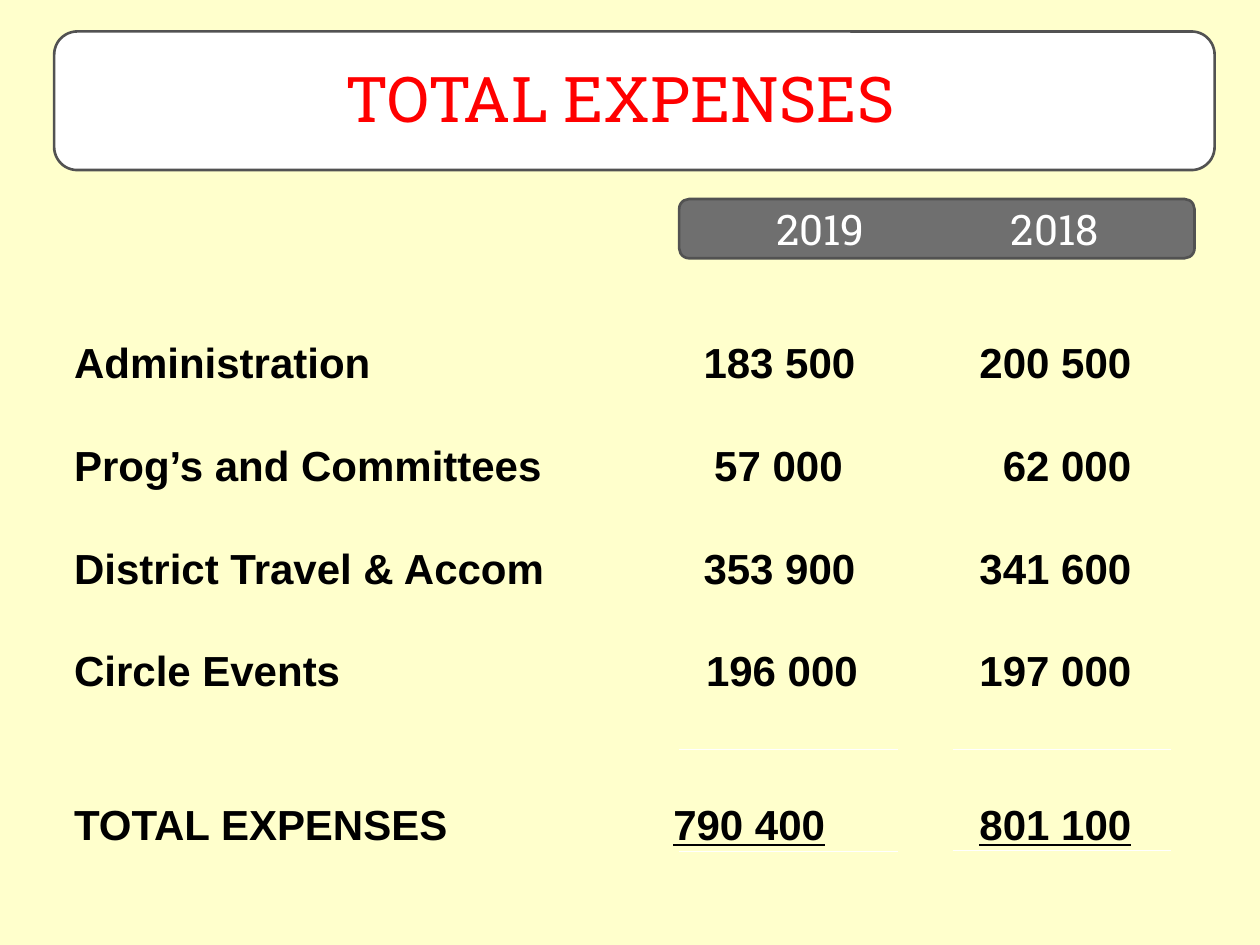
from typing import NamedTuple

import pptx
import pptx.dml.color
import pptx.enum.shapes
import pptx.enum.text
import pptx.oxml.ns
import pptx.util
from lxml import etree
from pptx.util import Inches, Pt

SLAB = "Roboto Slab"
ANCHOR = pptx.enum.text.MSO_ANCHOR
ALIGN = pptx.enum.text.PP_ALIGN


class Row(NamedTuple):
    label: str
    now: str
    past: str
    stop: float  # right edge of the 2019 amount, from the text's left
    gap: float = 30
    total: bool = False


class Rule(NamedTuple):
    left: float
    right: float
    top: float


ROWS = [
    Row("Administration", "183 500", "200 500", 6.2, gap=0),
    Row("Prog’s and Committees", "57 000", "62 000", 6.1),
    Row("District Travel & Accom", "353 900", "341 600", 6.2),
    Row("Circle Events", "196 000", "197 000", 6.22),
    Row("TOTAL EXPENSES", "790 400", "801 100", 5.96, gap=58.7, total=True),
]
PAST_STOP = 8.39
RULES = [
    Rule(7.56, 9.29, 5.95),
    Rule(7.56, 9.29, 6.75),
    Rule(5.39, 7.13, 5.95),
    Rule(5.39, 7.13, 6.76),
]


def rgb(code: str):
    return pptx.dml.color.RGBColor.from_string(code)


def style(run, size: float, face: str, color: str, bold=None) -> None:
    font = run.font
    font.size, font.name, font.bold = Pt(size), face, bold
    font.color.rgb = rgb(color)


def set_tabs(para, kind: str, stops: list[float]) -> None:
    """Add tab stops of one kind ("r" or "ctr"), in inches."""
    qn = pptx.oxml.ns.qn
    tabs = etree.SubElement(para._p.get_or_add_pPr(), qn("a:tabLst"))
    for stop in stops:
        etree.SubElement(tabs, qn("a:tab"), pos=str(Inches(stop)), algn=kind)


def add_panel(slide, left: float, top: float, width: float, height: float, fill: str):
    panel = slide.shapes.add_shape(
        pptx.enum.shapes.MSO_SHAPE.ROUNDED_RECTANGLE,
        Inches(left), Inches(top), Inches(width), Inches(height))
    panel.shadow.inherit = False
    panel.fill.solid()
    panel.fill.fore_color.rgb = rgb(fill)
    panel.line.color.rgb = rgb("525252")
    panel.line.width = Pt(1.5)
    return panel


def add_title(slide) -> None:
    add_panel(slide, 0.43, 0.25, 9.21, 1.1, "FFFFFF")
    title = slide.shapes.title
    slide.shapes._spTree.append(title._element)  # in front of its panel
    title.left, title.top = Inches(1.08), Inches(0.4)
    title.width, title.height = Inches(7.68), Inches(0.75)
    frame = title.text_frame
    frame.text = "TOTAL EXPENSES"
    frame.vertical_anchor = ANCHOR.MIDDLE
    para = frame.paragraphs[0]
    para.alignment = ALIGN.CENTER
    style(para.runs[0], 36, SLAB, "FF0000")


def add_rows(slide) -> None:
    box = slide.shapes.add_textbox(
        Inches(0.49), Inches(2.62), Inches(9.1), Inches(4.14))
    frame = box.text_frame
    frame.word_wrap = True
    for i, row in enumerate(ROWS):
        para = frame.add_paragraph() if i else frame.paragraphs[0]
        para.space_before = Pt(row.gap)
        set_tabs(para, "r", [row.stop, PAST_STOP])
        for text in (row.label, "\t", row.now, "\t", row.past):
            run = para.add_run()
            run.text = text
            style(run, 24, "Arial", "000000", bold=True)
            if row.total and text in (row.now, row.past):
                run.font.underline = True


def add_rule(slide, rule: Rule) -> None:
    line = slide.shapes.add_connector(
        pptx.enum.shapes.MSO_CONNECTOR.STRAIGHT,
        Inches(rule.left), Inches(rule.top), Inches(rule.right), Inches(rule.top))
    line.line.color.rgb = rgb("FFFFFF")
    line.line.width = Pt(0.75)
    etree.SubElement(line._element.spPr, pptx.oxml.ns.qn("a:effectLst"))


def add_years(slide) -> None:
    bar = add_panel(slide, 5.39, 1.58, 4.09, 0.47, "6F6F6F")
    frame = bar.text_frame
    frame.text = "\t2019\t2018"
    frame.vertical_anchor = ANCHOR.MIDDLE
    para = frame.paragraphs[0]
    para.alignment = ALIGN.LEFT
    set_tabs(para, "ctr", [1.0, 2.86])
    style(para.runs[0], 24, SLAB, "FFFFFF")


def main() -> None:
    deck = pptx.Presentation()
    deck.slide_width, deck.slide_height = Inches(10), Inches(7.5)
    slide = deck.slides.add_slide(deck.slide_layouts.get_by_name("Title Only"))
    slide.background.fill.solid()
    slide.background.fill.fore_color.rgb = rgb("FFFFCC")
    add_title(slide)
    add_rows(slide)
    for rule in RULES:
        add_rule(slide, rule)
    add_years(slide)
    deck.save("out.pptx")


if __name__ == "__main__":
    main()
